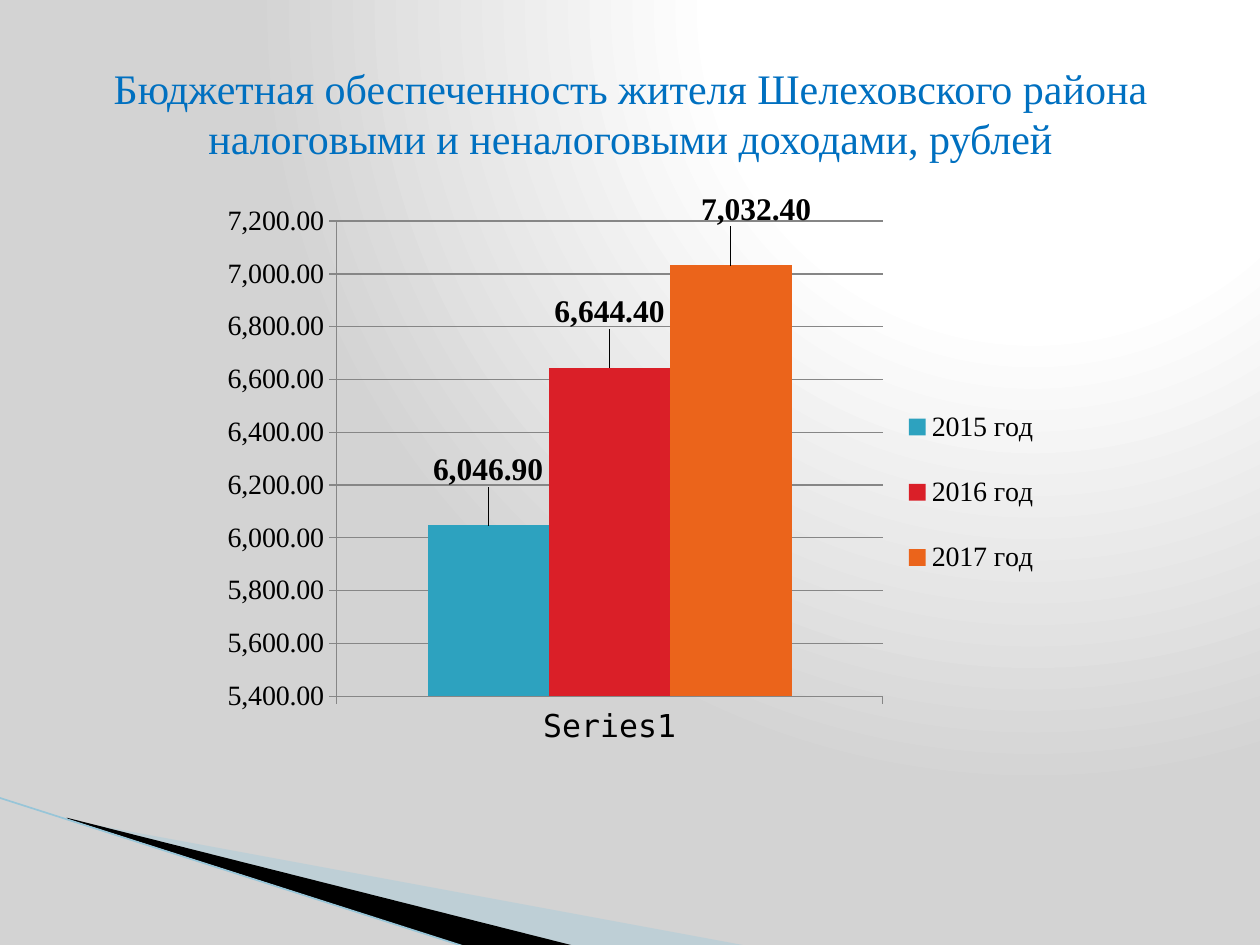
from lxml import etree
from pptx import Presentation
from pptx import oxml
from pptx import util as u
from pptx.chart.data import CategoryChartData
from pptx.dml.color import RGBColor
from pptx.enum import chart as charts, shapes, text
from pptx.oxml import ns

BLACK = RGBColor(0x00, 0x00, 0x00)
TITLE_BLUE = RGBColor(0x00, 0x70, 0xC0)
PALE_BLUE = RGBColor(0xA0, 0xCB, 0xDC)
EDGE_BLUE = RGBColor(0x97, 0xC5, 0xD8)
GRID_GRAY = RGBColor(0x86, 0x86, 0x86)
TEAL = RGBColor(0x2D, 0xA2, 0xBF)
RED = RGBColor(0xDA, 0x1F, 0x28)
ORANGE = RGBColor(0xEB, 0x64, 0x1B)

YEARS = [
    ("2015 год", 6046.9, TEAL, 0),
    ("2016 год", 6644.4, RED, 0),
    ("2017 год", 7032.4, ORANGE, 0.03),
]
LABEL_RISE = -0.06
NUMBER_FORMAT = "#,##0.00"


class SlideBuilder:
    """Holds the style and the current slide and adds its elements."""

    serif = "Times New Roman"
    mono = "DejaVu Sans Mono"

    def __init__(self, presentation):
        self.slide = presentation.slides.add_slide(presentation.slide_layouts[5])

    def format_font(self, font, name, size, color=BLACK, bold=False):
        font.name = name
        font.size = u.Pt(size)
        font.bold = bold
        font.color.rgb = color

    def background(self, stops, focus):
        stop_xml = "".join(
            f'<a:gs pos="{position * 1000}"><a:srgbClr val="{color}"/></a:gs>'
            for position, color in stops
        )
        edges = " ".join(f'{side}="{value * 1000}"' for side, value in zip("ltrb", focus))
        gradient = oxml.parse_xml(
            f'<a:gradFill {ns.nsdecls("a")} rotWithShape="1"><a:gsLst>{stop_xml}</a:gsLst>'
            f'<a:path path="circle"><a:fillToRect {edges}/></a:path></a:gradFill>'
        )
        fill = self.slide.background.fill
        fill.solid()
        solid = self.slide.element.find(".//" + ns.qn("p:bgPr")).find(ns.qn("a:solidFill"))
        solid.getparent().replace(solid, gradient)

    def wedge(self, points, color, opacity=100):
        corners = [(u.Inches(x), u.Inches(y)) for x, y in points]
        builder = self.slide.shapes.build_freeform(*corners[0], scale=1.0)
        builder.add_line_segments(corners[1:], close=True)
        shape = builder.convert_to_shape()
        shape.shadow.inherit = False
        shape.line.fill.background()
        shape.fill.solid()
        shape.fill.fore_color.rgb = color
        if opacity < 100:
            color_element = shape.element.spPr.find(".//" + ns.qn("a:srgbClr"))
            alpha = etree.SubElement(color_element, ns.qn("a:alpha"))
            alpha.set("val", str(opacity * 1000))

    def line(self, start, end, color, width):
        ends = [u.Inches(value) for value in (*start, *end)]
        connector = self.slide.shapes.add_connector(shapes.MSO_CONNECTOR.STRAIGHT, *ends)
        connector.line.color.rgb = color
        connector.line.width = u.Pt(width)
        etree.SubElement(connector.element.spPr, ns.qn("a:effectLst"))

    def title(self, wording, left, top, width, height):
        shape = self.slide.shapes.title
        shape.left, shape.top = u.Inches(left), u.Inches(top)
        shape.width, shape.height = u.Inches(width), u.Inches(height)
        frame = shape.text_frame
        frame.text = wording
        frame.word_wrap = True
        frame.auto_size = text.MSO_AUTO_SIZE.SHAPE_TO_FIT_TEXT
        paragraph = frame.paragraphs[0]
        paragraph.alignment = text.PP_ALIGN.CENTER
        self.format_font(paragraph.runs[0].font, self.serif, 24, TITLE_BLUE)

    def manual_layout(self, target="", **values):
        modes = "".join(
            f'<c:{side}Mode val="edge"/>' for side in "xy" if "w" in values
        )
        sizes = "".join(f'<c:{key} val="{value}"/>' for key, value in values.items())
        inner = f'<c:layoutTarget val="{target}"/>' if target else ""
        return oxml.parse_xml(
            f'<c:layout {ns.nsdecls("c")}><c:manualLayout>{inner}{modes}{sizes}'
            "</c:manualLayout></c:layout>"
        )

    def column_chart(self, left, top, width, height):
        data = CategoryChartData(number_format=NUMBER_FORMAT)
        data.categories = ["Series1"]
        for name, value, _, _ in YEARS:
            data.add_series(name, [value])
        box = [u.Inches(value) for value in (left, top, width, height)]
        chart = self.slide.shapes.add_chart(
            charts.XL_CHART_TYPE.COLUMN_CLUSTERED, *box, data
        ).chart
        chart.has_title = False
        self.format_font(chart.font, self.mono, 18)
        plot = chart.plots[0]
        plot.vary_by_categories = False
        plot.gap_width = 150
        plot.overlap = 0
        for series, (_, _, color, shift) in zip(plot.series, YEARS):
            self.series(series, color, shift)
        self.axes(chart)
        self.legend(chart)
        area = chart.element.find(".//" + ns.qn("c:plotArea"))
        for layout in area.findall(ns.qn("c:layout")):
            area.remove(layout)
        area.insert(0, self.manual_layout("inner", x=0.15, y=0.05, w=0.65, h=0.85))

    def series(self, series, color, shift):
        series.format.fill.solid()
        series.format.fill.fore_color.rgb = color
        labels = series.data_labels
        labels.show_value = True
        self.format_font(labels.font, self.serif, 18, bold=True)
        label = series.points[0].data_label
        self.format_font(label.font, self.serif, 18, bold=True)
        label.position = charts.XL_LABEL_POSITION.OUTSIDE_END
        index = labels._element.find(ns.qn("c:dLbl")).find(ns.qn("c:idx"))
        index.addnext(self.manual_layout(x=shift, y=LABEL_RISE))

    def axes(self, chart):
        values = chart.value_axis
        values.minimum_scale, values.maximum_scale = 5400, 7200
        values.major_unit = 200
        values.has_major_gridlines = True
        values.major_gridlines.format.line.color.rgb = GRID_GRAY
        values.tick_labels.number_format = NUMBER_FORMAT
        values.tick_labels.number_format_is_linked = False
        self.format_font(values.tick_labels.font, self.serif, 16)
        for axis in (values, chart.category_axis):
            axis.major_tick_mark = charts.XL_TICK_MARK.OUTSIDE
            axis.format.line.color.rgb = GRID_GRAY

    def legend(self, chart):
        chart.has_legend = True
        legend = chart.legend
        legend.position = charts.XL_LEGEND_POSITION.RIGHT
        legend.include_in_layout = False
        self.format_font(legend.font, self.serif, 16)
        element = legend._element
        for layout in element.findall(ns.qn("c:layout")):
            element.remove(layout)
        position = element.find(ns.qn("c:legendPos"))
        position.addnext(self.manual_layout(x=0.82, y=0.33, w=0.17, h=0.41))


def main():
    presentation = Presentation()
    presentation.slide_width = u.Inches(10)
    presentation.slide_height = u.Inches(7.5)
    builder = SlideBuilder(presentation)
    builder.background([(0, "FFFFFF"), (40, "FFFFFF"), (100, "D3D3D3")], (65, 0, 0, 98))
    builder.wedge([(0.55, 6.51), (5.95, 7.51), (4.56, 7.51), (0.55, 6.5)], PALE_BLUE, 40)
    builder.wedge([(0.53, 6.49), (4.57, 7.51), (3.72, 7.52), (0.54, 6.5)], BLACK)
    builder.line((-0.01, 6.33), (3.71, 7.52), EDGE_BLUE, 0.95)
    builder.column_chart(1.67, 1.53, 6.67, 4.44)
    builder.title(
        "Бюджетная обеспеченность жителя Шелеховского района "
        "налоговыми и неналоговыми доходами, рублей",
        0.2, 0.44, 9.61, 0.91,
    )
    presentation.save("out.pptx")


if __name__ == "__main__":
    main()
